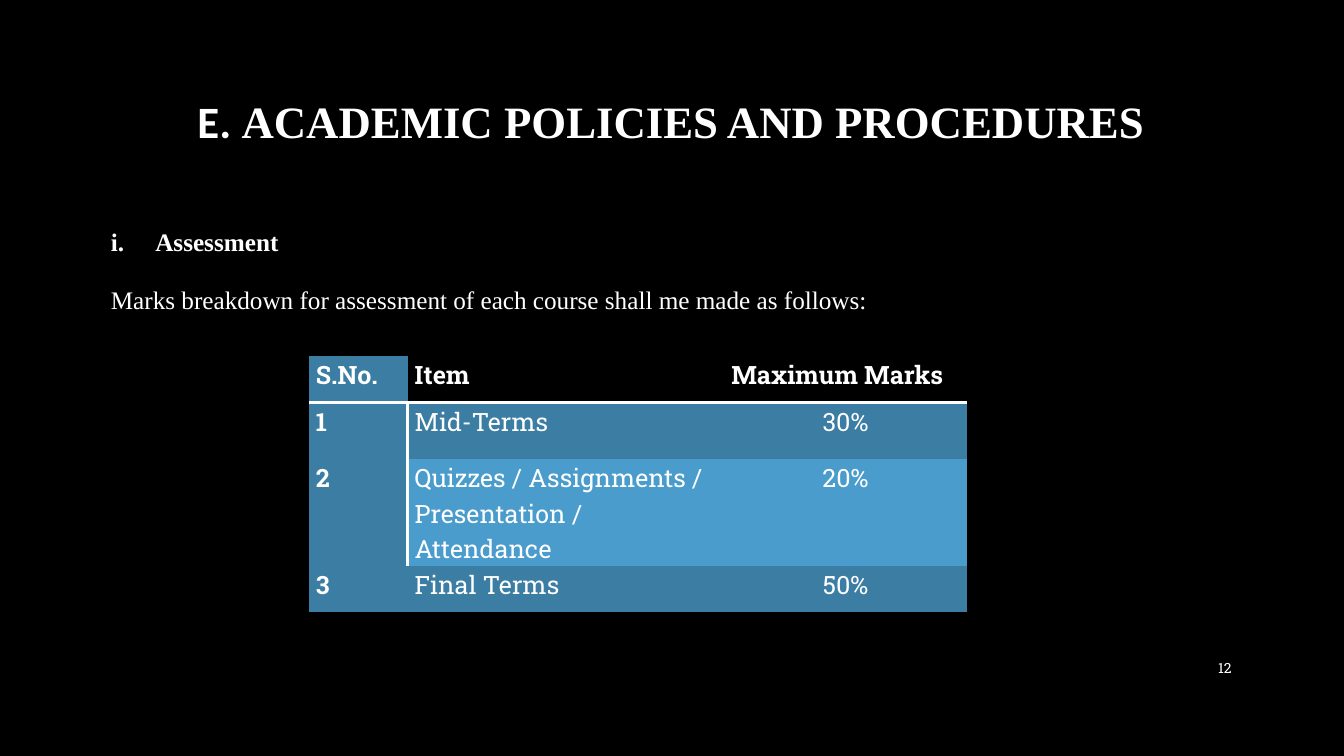
from lxml.etree import SubElement
from pptx import Presentation
from pptx.dml.color import RGBColor
from pptx.enum.text import MSO_ANCHOR as Anchor, MSO_AUTO_SIZE as AutoSize, PP_ALIGN as Align
from pptx.oxml.ns import qn
from pptx.util import Cm, Pt

COLOURS = {"background": "000000", "text": "FFFFFF", "dark": "3B7DA3", "light": "4A9CCC"}
SERIF, SLAB, SANS = "Times New Roman", "Roboto Slab", "Calibri"


def colour(name):
    return RGBColor.from_string(COLOURS[name])


def apply(target, values):
    for name, value in values.items():
        setattr(target, name, value)


class PolicySlide:
    def __init__(self, deck):
        self.slide = deck.slides.add_slide(deck.slide_layouts[1])
        backdrop = self.slide.background.fill
        backdrop.solid()
        backdrop.fore_color.rgb = colour("background")

    def run(self, paragraph, text, font, size, bold=False):
        run = paragraph.add_run()
        run.text = text
        apply(run.font, {"name": font, "size": Pt(size), "bold": bold})
        run.font.color.rgb = colour("text")

    def place(self, shape, box, **frame_format):
        apply(shape, dict(zip(("left", "top", "width", "height"), map(Cm, box))))
        apply(shape.text_frame, {"word_wrap": True, "auto_size": AutoSize.NONE, **frame_format})
        return shape.text_frame

    def title(self, box, parts):
        frame = self.place(self.slide.shapes.title, box,
                           vertical_anchor=Anchor.MIDDLE, margin_top=Cm(0.82))
        heading = frame.paragraphs[0]
        apply(heading, {"alignment": Align.CENTER, "line_spacing": 0.9})
        for text, font in parts:
            self.run(heading, text, font, 32, True)

    def body(self, box, heading, sentence):
        frame = self.place(self.slide.placeholders[1], box,
                           vertical_anchor=Anchor.TOP, margin_top=Cm(1.56))
        numbered, plain = frame.paragraphs[0], frame.add_paragraph()
        # Roman numbering for the heading, none for the sentence
        props = numbered._p.get_or_add_pPr()
        apply_indent = {"marL": Cm(1.12), "indent": Cm(-1.12)}
        for name, value in apply_indent.items():
            props.set(name, str(int(value)))
        SubElement(props, qn("a:buFont")).set("typeface", SERIF)
        SubElement(props, qn("a:buAutoNum")).set("type", "romanLcPeriod")
        props = plain._p.get_or_add_pPr()
        for name in apply_indent:
            props.set(name, "0")
        SubElement(props, qn("a:buNone"))

        for paragraph, before in ((numbered, 0), (plain, 10)):
            apply(paragraph, {"alignment": Align.JUSTIFY, "line_spacing": 1.07,
                              "space_before": Pt(before), "space_after": Pt(8)})
        self.run(numbered, heading, SERIF, 18, True)
        self.run(plain, sentence, SERIF, 18)

    def borders(self, cell, ruled):
        props = cell._tc.get_or_add_tcPr()
        for side in "LRTB":
            line = SubElement(props, qn(f"a:ln{side}"))
            if side in ruled:
                line.set("w", str(int(Pt(2))))
                fill = SubElement(line, qn("a:solidFill"))
                SubElement(fill, qn("a:srgbClr")).set("val", COLOURS["text"])
            else:
                SubElement(line, qn("a:noFill"))

    def marks_table(self, left, top, widths, heights, rows):
        marks = self.slide.shapes.add_table(
            len(rows), len(widths), Cm(left), Cm(top), Cm(sum(widths)), Cm(sum(heights))).table
        for column, width in zip(marks.columns, widths):
            column.width = Cm(width)
        for r, (row, height) in enumerate(zip(rows, heights)):
            marks.rows[r].height = Cm(height)
            for c, text in enumerate(row):
                cell = marks.cell(r, c)
                # Rule under the header and beside the serial numbers
                ruled = {0: "B", 1: "T"}.get(r, "")
                if r in (1, 2):
                    ruled += {0: "R", 1: "L"}.get(c, "")
                self.borders(cell, ruled)
                shade = "dark" if c == 0 or r % 2 else "background" if r == 0 else "light"
                cell.fill.solid()
                cell.fill.fore_color.rgb = colour(shade if r < 3 else "dark")
                apply(cell, {"margin_left": Cm(0.18), "margin_right": Cm(0.18),
                             "margin_top": 0, "margin_bottom": 0})
                entry = cell.text_frame.paragraphs[0]
                centred = r > 0 and c == 2
                wrapped = r == 2 and c == 1
                align = Align.CENTER if centred else Align.LEFT if wrapped else Align.JUSTIFY
                apply(entry, {"alignment": align, "line_spacing": 1.07, "space_after": Pt(8)})
                self.run(entry, text, SLAB, 18, r == 0 or c == 0)

    def page_number(self, box, number):
        frame = self.place(self.slide.shapes.add_textbox(*map(Cm, box)), box,
                           vertical_anchor=Anchor.MIDDLE)
        frame.paragraphs[0].alignment = Align.RIGHT
        self.run(frame.paragraphs[0], number, SLAB, 10)


def main():
    deck = Presentation()
    apply(deck, {"slide_width": Cm(33.87), "slide_height": Cm(19.05)})
    policies = PolicySlide(deck)

    # Heading and introduction
    policies.title((2.54, 1.7, 28.75, 2.18),
                   [("E. ", SANS), ("ACADEMIC POLICIES AND PROCEDURES", SERIF)])
    policies.body((2.54, 4.09, 28.75, 13.79), "Assessment",
                  "Marks breakdown for assessment of each course shall me made as follows:")

    # Marks breakdown
    policies.marks_table(7.78, 8.97, (2.49, 7.98, 6.12), (1.17, 1.42, 2.26, 1.17), [
        ("S.No.", "Item", "Maximum Marks"),
        ("1", "Mid-Terms", "30%"),
        ("2", "Quizzes / Assignments / Presentation / Attendance", "20%"),
        ("3", "Final Terms", "50%"),
    ])

    # Footer
    policies.page_number((29.21, 16.33, 2.08, 1.02), "12")
    deck.save("out.pptx")


if __name__ == "__main__":
    main()
